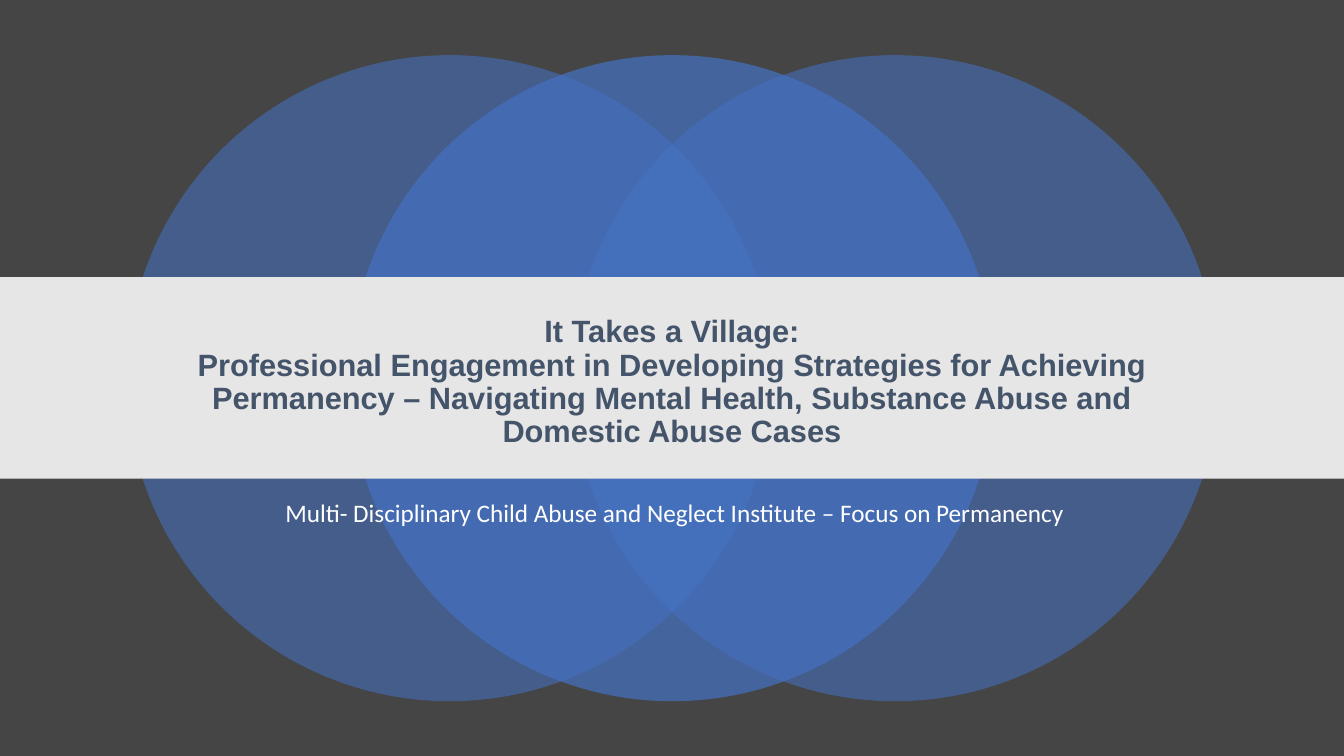
from lxml.etree import SubElement as Sub
from pptx import Presentation
from pptx.dml.color import RGBColor as Rgb
from pptx.enum.shapes import MSO_SHAPE as Kind
from pptx.enum.text import MSO_ANCHOR as Anchor, MSO_AUTO_SIZE as Fit, PP_ALIGN as Align
from pptx.oxml.ns import qn
from pptx.util import Pt

HEX = {"ground": "454545", "disc": "4472C4", "band": "E7E6E6",
       "title": "44546A", "sub": "FFFFFF"}
WIDE, HIGH = 960, 540
TITLE = ("It Takes a Village:\vProfessional Engagement in Developing Strategies "
         "for Achieving Permanency – Navigating Mental Health, Substance Abuse "
         "and Domestic Abuse Cases")
SUB = " Multi- Disciplinary Child Abuse and Neglect Institute – Focus on Permanency"


def put(item, form):
    for name, value in form.items():
        setattr(item, name, value)


def place(item, box):
    put(item, dict(zip(("left", "top", "width", "height"), map(Pt, box))))


def paint(shapes, kind, box, tone, alpha=100):
    shape = shapes.add_shape(kind, *map(Pt, box))
    shape.shadow.inherit = False
    shape.line.fill.background()
    shape.fill.solid()
    shape.fill.fore_color.rgb = Rgb.from_string(HEX[tone])
    if alpha < 100:
        hue = shape.fill._xPr.find(qn("a:solidFill"))[0]
        Sub(hue, qn("a:alpha"), val=str(alpha * 1000))


def write(item, text, tone, anchor, font):
    frame = item.text_frame
    put(frame, {"word_wrap": True, "auto_size": Fit.NONE, "vertical_anchor": anchor})
    frame.text = text
    para = frame.paragraphs[0]
    put(para, {"alignment": Align.CENTER, "line_spacing": 0.9})
    for run in para.runs:
        put(run.font, font)
        run.font.color.rgb = Rgb.from_string(HEX[tone])


def discs(slide, box):
    left, top, width, size = box
    step = (width - size) / 2
    group = slide.shapes.add_group_shape()
    for slot, alpha in ((0, 55), (2, 55), (1, 70)):
        paint(group.shapes, Kind.OVAL, (left + slot * step, top, size, size),
              "disc", alpha)


def banner(slide, box):
    left, top, width, height = box
    paint(slide.shapes, Kind.RECTANGLE, box, "band")
    title = slide.shapes.title
    slide.shapes._spTree.append(title._element)
    place(title, (left + 120, top + 21, width - 240, height - 35))
    write(title, TITLE, "title", Anchor.MIDDLE,
          {"size": Pt(22), "name": "Arial", "bold": True})


def footing(slide, box):
    item = slide.shapes.add_textbox(*map(Pt, box))
    write(item, SUB, "sub", Anchor.TOP, {"size": Pt(18), "name": "Calibri"})


def cover(deck):
    slide = deck.slides.add_slide(deck.slide_layouts[5])
    slide.background.fill.solid()
    slide.background.fill.fore_color.rgb = Rgb.from_string(HEX["ground"])
    discs(slide, (90.4, 39.4, 779.7, 461.5))
    banner(slide, (0, 198, WIDE, 144))
    footing(slide, (120, 354, WIDE - 240, 60))


def main():
    deck = Presentation()
    put(deck, {"slide_width": Pt(WIDE), "slide_height": Pt(HIGH)})
    cover(deck)
    deck.save("out.pptx")


if __name__ == "__main__":
    main()
